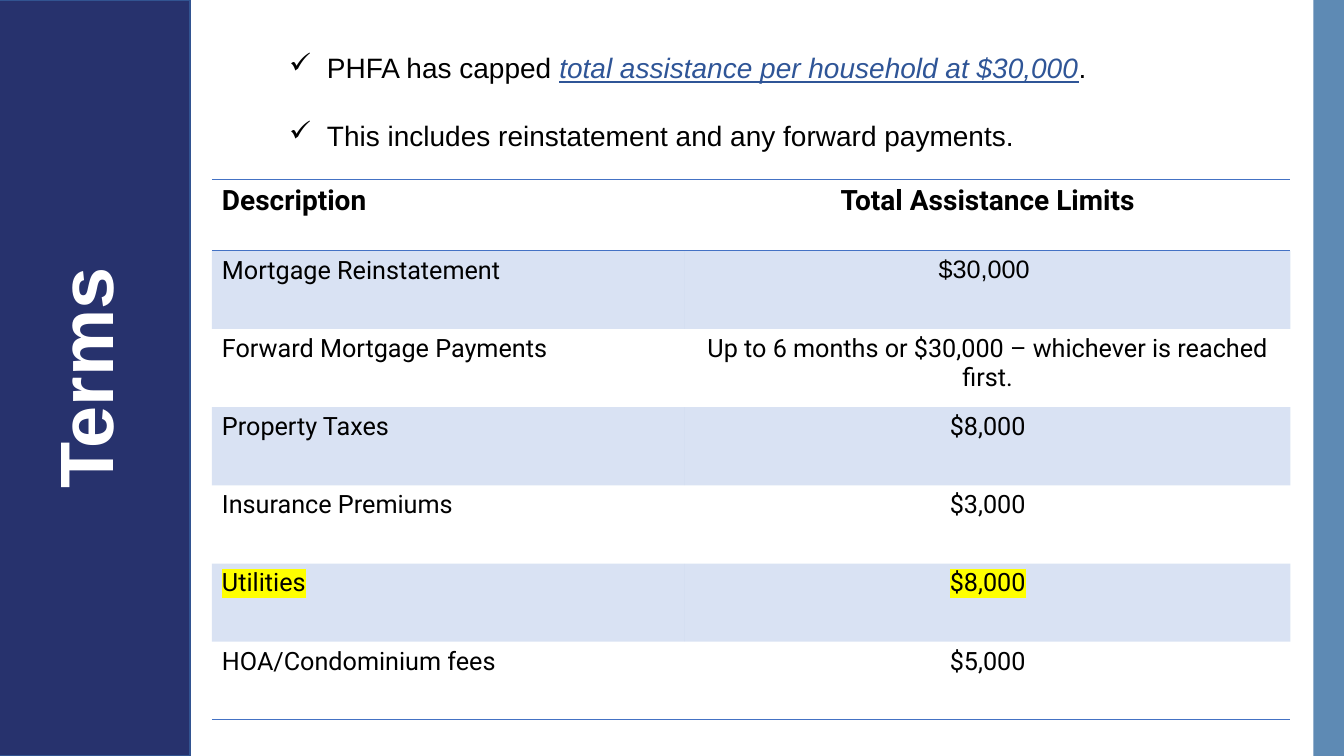
from lxml.etree import SubElement
from pptx import Presentation
from pptx.dml.color import RGBColor
from pptx.enum.shapes import MSO_SHAPE
from pptx.enum.text import MSO_ANCHOR, PP_ALIGN
from pptx.oxml import parse_xml
from pptx.oxml.ns import nsdecls, qn
from pptx.util import Cm, Pt

COLORS = {
    "navy": "27326D",
    "navy_edge": "325491",
    "steel": "5E8AB4",
    "accent": "4472C4",
    "emphasis": "2F5597",
    "highlight": "FFFF00",
    "black": "000000",
    "white": "FFFFFF",
}
NO_STYLE_NO_GRID = "{2D5ABB26-0587-4C30-8999-92F81FD0307C}"

POINTS = [
    [("PHFA has capped ", False),
     ("total assistance per household at $30,000", True),
     (".", False)],
    [("This includes reinstatement and any forward payments.", False)],
]
LIMITS = [
    ("Description", "Total Assistance Limits"),
    ("Mortgage Reinstatement", "$30,000 "),
    ("Forward Mortgage Payments",
     "Up to 6 months or $30,000 – whichever is reached first."),
    ("Property Taxes", "$8,000"),
    ("Insurance Premiums", "$3,000"),
    ("Utilities", "$8,000"),
    ("HOA/Condominium fees", "$5,000"),
]
HIGHLIGHTED = "Utilities"
ARIAL_CELL = "$30,000 "


def rgb(name):
    return RGBColor.from_string(COLORS[name])


class TermsSlide:
    """Holds the slide and the style shared by its elements."""

    text_font = "Arial"
    table_font = "Roboto"

    def __init__(self, presentation):
        self.slide = presentation.slides.add_slide(presentation.slide_layouts[6])

    def style(self, paragraph, size, font=text_font, color="black", bold=False):
        paragraph.font.size = Pt(size)
        paragraph.font.name = font
        paragraph.font.bold = bold
        paragraph.font.color.rgb = rgb(color)

    def panel(self, left, top, width, height, fill, edge=None):
        panel = self.slide.shapes.add_shape(
            MSO_SHAPE.RECTANGLE, Cm(left), Cm(top), Cm(width), Cm(height))
        panel.shadow.inherit = False
        panel.fill.solid()
        panel.fill.fore_color.rgb = rgb(fill)
        if edge:
            panel.line.color.rgb = rgb(edge)
            panel.line.width = Pt(1)
        else:
            panel.line.fill.background()
        return panel

    def side_title(self, text, left, top, width, height):
        """Add a panel turned to read from bottom to top."""
        panel = self.panel(left, top, width, height, "navy", "navy_edge")
        panel.rotation = 270
        panel.text_frame.vertical_anchor = MSO_ANCHOR.MIDDLE
        title = panel.text_frame.paragraphs[0]
        title.text = text
        title.alignment = PP_ALIGN.CENTER
        self.style(title, 54, color="white", bold=True)

    def checklist(self, points, left, top, width, height):
        frame = self.slide.shapes.add_textbox(
            Cm(left), Cm(top), Cm(width), Cm(height)).text_frame
        frame.word_wrap = True
        frame.margin_top = Cm(1)
        for index, pieces in enumerate(points):
            point = frame.paragraphs[0] if index == 0 else frame.add_paragraph()
            if index:
                point.space_before = Pt(24.4)
            properties = point._p.get_or_add_pPr()
            properties.set("marL", str(Cm(0.95)))
            properties.set("indent", str(-Cm(0.95)))
            SubElement(properties, qn("a:buChar")).set("char", "✓")
            self.style(point, 20)
            for text, emphasized in pieces:
                run = point.add_run()
                run.text = text
                if emphasized:
                    run.font.italic = True
                    run.font.underline = True
                    run.font.color.rgb = rgb("emphasis")

    def rule(self, cell, side):
        """Draw a border on one side ("T" or "B") of a cell."""
        cell._tc.get_or_add_tcPr().insert(0, parse_xml(
            f'<a:ln{side} {nsdecls("a")} w="{Pt(1)}"><a:solidFill>'
            f'<a:srgbClr val="{COLORS["accent"]}"/></a:solidFill></a:ln{side}>'))

    def band(self, cell):
        """Tint a cell with the accent colour at 20 % opacity."""
        cell.fill.solid()
        cell.fill.fore_color.rgb = rgb("accent")
        tint = cell._tc.tcPr.find(".//" + qn("a:srgbClr"))
        SubElement(tint, qn("a:alpha")).set("val", "20000")

    def mark(self, run):
        """Highlight a run."""
        marker = SubElement(run._r.get_or_add_rPr(), qn("a:highlight"))
        SubElement(marker, qn("a:srgbClr")).set("val", COLORS["highlight"])

    def limits_table(self, rows, left, top, widths, header_height, row_height):
        height = header_height + row_height * (len(rows) - 1)
        table = self.slide.shapes.add_table(
            len(rows), len(widths), Cm(left), Cm(top),
            Cm(sum(widths)), Cm(height)).table
        table.horz_banding = False
        table._tbl.tblPr.find(qn("a:tableStyleId")).text = NO_STYLE_NO_GRID
        for column, width in zip(table.columns, widths):
            column.width = Cm(width)
        for r, texts in enumerate(rows):
            header = r == 0
            table.rows[r].height = Cm(header_height if header else row_height)
            for c, text in enumerate(texts):
                cell = table.cell(r, c)
                entry = cell.text_frame.paragraphs[0]
                entry.text = text
                entry.alignment = PP_ALIGN.CENTER if c else PP_ALIGN.LEFT
                font = self.text_font if text == ARIAL_CELL else self.table_font
                self.style(entry, 20 if header else 18, font, bold=header)
                if texts[0] == HIGHLIGHTED:
                    self.mark(entry.runs[0])
                if r % 2:
                    self.band(cell)
                else:
                    cell.fill.background()
                if header or r == len(rows) - 1:
                    self.rule(cell, "B")
                if header:
                    self.rule(cell, "T")


def main():
    presentation = Presentation()
    presentation.slide_width = Cm(33.87)
    presentation.slide_height = Cm(19.05)

    terms = TermsSlide(presentation)
    terms.side_title("Terms", -7.42, 6.84, 19.05, 5.37)
    terms.panel(33.1, 0, 0.77, 19.05, "steel")
    terms.checklist(POINTS, 7.04, 0.28, 22.63, 4.52)
    terms.limits_table(LIMITS, 5.34, 4.52, [11.92, 15.26], 1.8, 1.97)

    presentation.save("out.pptx")


if __name__ == "__main__":
    main()
